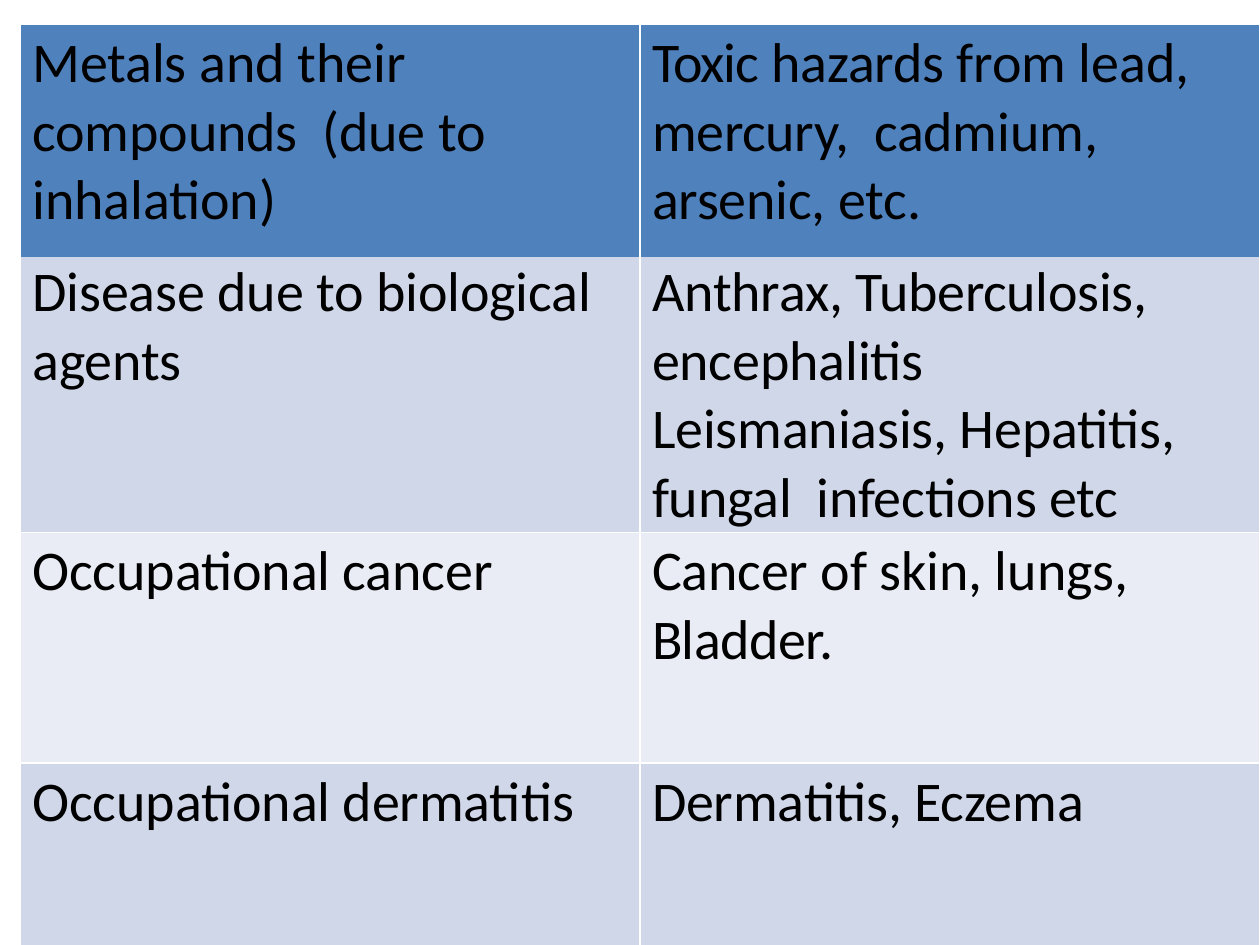
"""Build a slide with a table of occupational diseases and their causes."""
from lxml.etree import SubElement
from pptx import Presentation
from pptx.dml.color import RGBColor
from pptx.oxml.ns import qn
from pptx.util import Pt

BLACK = RGBColor(0x00, 0x00, 0x00)
BLUE = RGBColor(0x4F, 0x81, 0xBC)
MIST = RGBColor(0xD0, 0xD7, 0xE8)
PALE = RGBColor(0xE9, 0xEC, 0xF4)
LINE_COLOR = "FFFFFF"

LEFT, TOP = 11.6, 13.8
COLUMN_WIDTHS = (354, 353.8)
INDENT = 7
RIGHT_MARGIN = 18

# Each run is (text, letter spacing in points).
ROWS = [
    dict(height=133.2, fill=BLUE, margin=2.9, before=2, lines="LTR", cells=[
        [("Metals ", -0.1), ("and their ", 0), ("compounds  (due to inhalation)", -0.1)],
        [("Toxic ", -0.6), ("hazards from ", -0.1), ("lead, ", 0),
         ("mercury,  ", -0.2), ("cadmium, arsenic, etc.", -0.1)],
    ]),
    dict(height=154.1, fill=MIST, margin=0.7, before=0.6, lines="LRB", cells=[
        [("Disease due to biological agents", -0.1)],
        [("Anthrax, ", -0.1), ("Tuberculosis, ", -0.2),
         ("encephalitis  Leismaniasis, Hepatitis, fungal  infections etc", -0.1)],
    ]),
    dict(height=131.8, fill=PALE, margin=2.9, before=2.1, lines="LTRB", cells=[
        [("Occupational cancer", -0.1)],
        [("Cancer of skin, ", -0.1), ("lungs, ", 0), ("Bladder.", -0.3)],
    ]),
    dict(height=131.8, fill=MIST, margin=2.9, before=2.1, lines="LTR", cells=[
        [("Occupational dermatitis", -0.1)],
        [("Dermatitis, Eczema", -0.1)],
    ]),
]


def set_borders(cell, sides, right_width):
    properties = cell._tc.get_or_add_tcPr()
    for side in "LRTB":
        width = right_width if side == "R" else 1
        line = SubElement(properties, qn(f"a:ln{side}"), w=str(Pt(width)))
        if side in sides:
            fill = SubElement(line, qn("a:solidFill"))
            SubElement(fill, qn("a:srgbClr"), val=LINE_COLOR)
        else:
            SubElement(line, qn("a:noFill"))


def write_runs(cell, runs, space_before):
    paragraph = cell.text_frame.paragraphs[0]
    paragraph.space_before = Pt(space_before)
    paragraph._p.get_or_add_pPr().set("marL", str(Pt(INDENT)))
    for text, spacing in runs:
        run = paragraph.add_run()
        run.text = text
        run.font.name = "Calibri"
        run.font.size = Pt(32)
        run.font.color.rgb = BLACK
        run.font._element.set("spc", str(round(spacing * 100)))


def main():
    presentation = Presentation()
    presentation.slide_width, presentation.slide_height = Pt(720), Pt(540)
    slide = presentation.slides.add_slide(presentation.slide_layouts[6])
    height = sum(row["height"] for row in ROWS)
    table = slide.shapes.add_table(
        len(ROWS), len(COLUMN_WIDTHS), Pt(LEFT), Pt(TOP),
        Pt(sum(COLUMN_WIDTHS)), Pt(height)).table
    table.first_row = table.horz_banding = False
    for column, width in zip(table.columns, COLUMN_WIDTHS):
        column.width = Pt(width)

    for row_index, row in enumerate(ROWS):
        table.rows[row_index].height = Pt(row["height"])
        for column_index, runs in enumerate(row["cells"]):
            cell = table.cell(row_index, column_index)
            cell.margin_left = cell.margin_bottom = Pt(0)
            cell.margin_right = Pt(RIGHT_MARGIN)
            cell.margin_top = Pt(row["margin"])
            is_last = column_index == len(COLUMN_WIDTHS) - 1
            set_borders(cell, row["lines"], 0.5 if is_last else 1)
            cell.fill.solid()
            cell.fill.fore_color.rgb = row["fill"]
            write_runs(cell, runs, row["before"])

    presentation.save("out.pptx")


if __name__ == "__main__":
    main()
